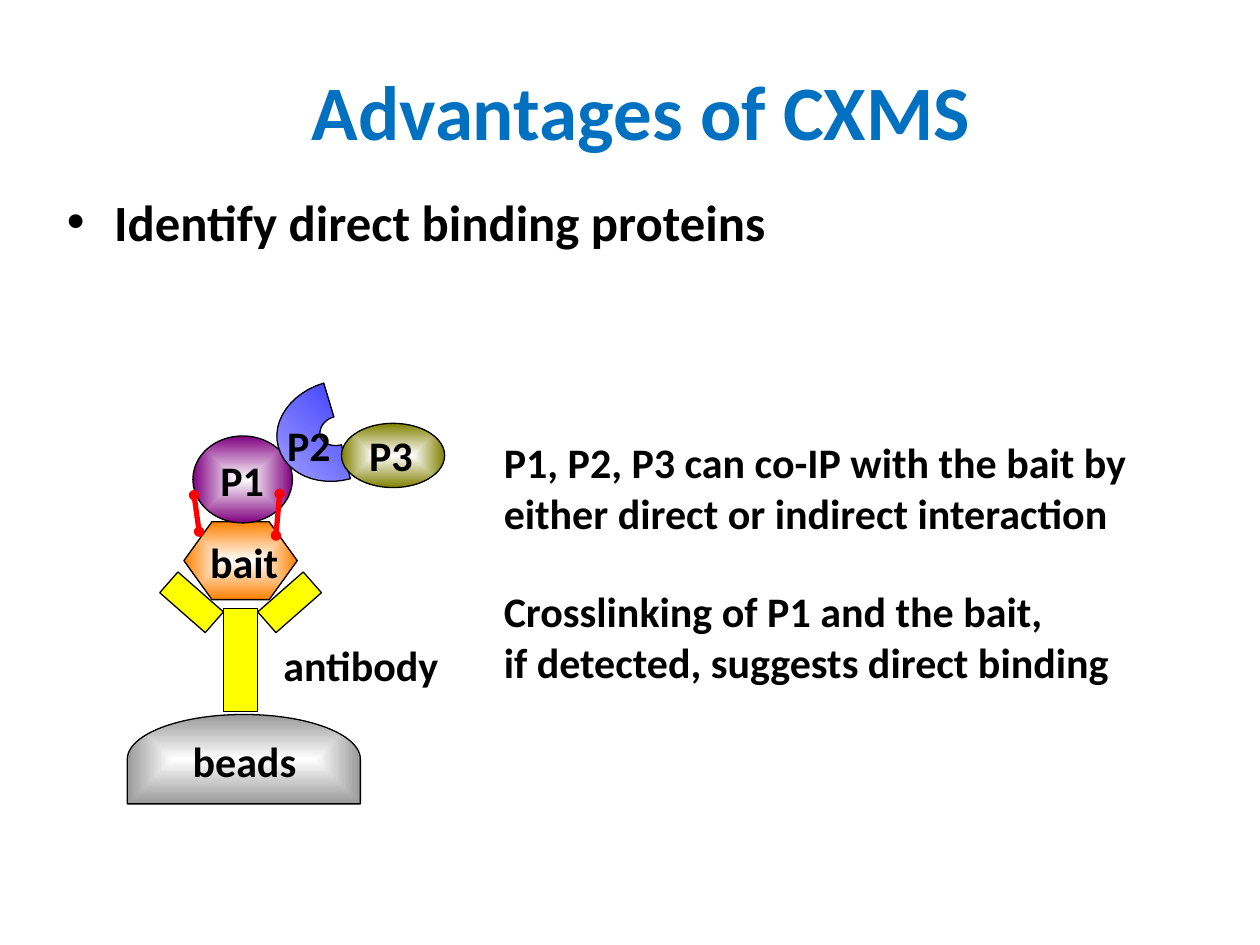
from lxml.etree import SubElement
from pptx import Presentation
from pptx.dml.color import RGBColor
from pptx.enum.shapes import MSO_CONNECTOR, MSO_SHAPE as Kind
from pptx.enum.text import MSO_ANCHOR, MSO_AUTO_SIZE, PP_ALIGN
from pptx.oxml import parse_xml
from pptx.oxml.ns import nsdecls, qn
from pptx.util import Pt

BLACK = RGBColor(0, 0, 0)
WHITE = RGBColor(255, 255, 255)
TITLE_BLUE = RGBColor(0x00, 0x70, 0xC0)
YELLOW = RGBColor(0xFF, 0xFF, 0x00)
RED = RGBColor(0xFF, 0x00, 0x00)
GRAY = RGBColor(0x99, 0x99, 0x99)
ORANGE = RGBColor(0xFF, 0x80, 0x00)
PURPLE = RGBColor(0x80, 0x00, 0x80)
OLIVE = RGBColor(0x80, 0x80, 0x00)
PALE_BLUE = RGBColor(0xA0, 0xA0, 0xFF)
BLUE = RGBColor(0x3C, 0x3C, 0xFF)

# Content: boxes are left, top, width, height in points
TITLE = ("Advantages of CXMS", (42.5, 30.2, 648, 65.5))
BULLET = ("Identify direct binding proteins", (31, 112.3, 648, 98.6))

# Kind, box, rotation, rim colour of the glow
BEADS = (Kind.FLOWCHART_DELAY, (113.8, 367.2, 51.1, 133.2), 270, GRAY)
BAIT = (Kind.HEXAGON, (105.1, 298.1, 64.8, 44.6), 0, ORANGE)
P1 = (Kind.OVAL, (110.2, 249.1, 56.9, 49.7), 0, PURPLE)
P3 = (Kind.OVAL, (195.1, 241.9, 59, 36.7), 0, OLIVE)

STEM = (127.8, 347.8, 19.4, 59)
ARM_SIZE, ARM_TOP, ARM_REACH, ARM_TILT = (15.8, 34.6), 326.9, 28, 48.7

P2_START = (195.1, 254.2)
P2_PATH = [  # one point is a line, three are a curve
    [(189.4, 255.6), (184.3, 253.4), (182.9, 249.1)],
    [(182.2, 244.8), (185, 239.8), (190.8, 238.3)],
    [(185, 218.9)],
    [(166.3, 224.6), (154.8, 240.5), (159.1, 255.6)],
    [(163.4, 270.7), (181.4, 278.6), (200.2, 273.6)],
]

LABELS = {
    "beads": (103, 416.9, 78, 36),
    "antibody": (154.8, 361.9, 106, 36),
    "bait": (113, 303.1, 56, 36),
    "P1": (118.8, 256.3, 42, 36),
    "P2": (157, 236.2, 42, 36),
    "P3": (203.8, 241.9, 42, 36),
}
NOTES = [
    ("P1, P2, P3 can co-IP with the bait by either direct or indirect interaction",
     (280.8, 246.2, 391.7, 64.8)),
    ("Crosslinking of P1 and the bait, \vif detected, suggests direct binding",
     (280.8, 331.2, 379.4, 65.5)),
]
CROSSLINKS = [(110.9, 283, 113.8, 303.8), (159.8, 282.2, 157.7, 306)]

deck = Presentation()
deck.slide_width, deck.slide_height = Pt(720), Pt(540)
page = deck.slides.add_slide(deck.slide_layouts[1])
shapes = page.shapes


def points(values):
    return [Pt(value) for value in values]


def write(box, text, size, color=BLACK, **paragraph_format):
    box.text_frame.text = text
    para = box.text_frame.paragraphs[0]
    for name, value in paragraph_format.items():
        setattr(para, name, value)
    for span in para.runs:
        span.font.color.rgb = color
        for name, value in {"name": "Calibri", "size": Pt(size), "bold": True}.items():
            setattr(span.font, name, value)
    return para


def fill_placeholder(box, content, size, color, **paragraph_format):
    text, place = content
    box.left, box.top, box.width, box.height = points(place)
    return write(box, text, size, color, **paragraph_format)


def add_text(text, place, wrap=False):
    box = shapes.add_textbox(*points(place))
    box.text_frame.word_wrap = wrap
    box.text_frame.auto_size = MSO_AUTO_SIZE.SHAPE_TO_FIT_TEXT
    write(box, text, 24)


def outline(shape):
    shape.shadow.inherit = False
    shape.line.color.rgb = BLACK
    shape.line.width = Pt(0.75)


def set_gradient(shape, first, last):
    shape.fill.gradient()
    stops = zip(shape.fill.gradient_stops, (first, last), (0, 1))
    for stop, color, position in stops:
        stop.color.rgb = color
        stop.position = position


def add_glow(kind, place, rotation, color):
    shape = shapes.add_shape(kind, *points(place))
    shape.rotation = rotation
    outline(shape)
    set_gradient(shape, WHITE, color)
    gradient = shape.element.spPr.find(qn("a:gradFill"))
    gradient.replace(gradient.find(qn("a:lin")), parse_xml(
        f'<a:path {nsdecls("a")} path="shape">'
        '<a:fillToRect l="50000" t="50000" r="50000" b="50000"/></a:path>'))
    return shape


def add_bar(place, rotation=0):
    bar = shapes.add_shape(Kind.RECTANGLE, *points(place))
    bar.rotation = rotation
    bar.fill.solid()
    bar.fill.fore_color.rgb = YELLOW
    outline(bar)


def curve(start, control_1, control_2, end, steps=12):
    for step in range(1, steps + 1):
        t = step / steps
        weights = ((1 - t) ** 3, 3 * t * (1 - t) ** 2, 3 * t * t * (1 - t), t ** 3)
        corners = (start, control_1, control_2, end)
        yield tuple(sum(w * c[axis] for w, c in zip(weights, corners)) for axis in (0, 1))


# Title and bullet
fill_placeholder(shapes.title, TITLE, 44, TITLE_BLUE, alignment=PP_ALIGN.CENTER)
shapes.title.text_frame.vertical_anchor = MSO_ANCHOR.MIDDLE
bullet = fill_placeholder(page.placeholders[1], BULLET, 29, BLACK,
                          line_spacing=0.8, space_before=Pt(5.8))
properties = bullet._p.get_or_add_pPr()
properties.set("marL", str(Pt(27)))
properties.set("indent", str(-Pt(27)))

# Beads, bait and antibody
add_glow(*BEADS)
add_text("beads", LABELS["beads"])
add_text("antibody", LABELS["antibody"])
add_glow(*BAIT).adjustments[0] = 0.361
add_bar(STEM)
axis_x = STEM[0] + STEM[2] / 2
for side in (-1, 1):
    left = axis_x + side * ARM_REACH - ARM_SIZE[0] / 2
    add_bar((left, ARM_TOP, *ARM_SIZE), side * ARM_TILT % 360)
add_text("bait", LABELS["bait"])

# Bound proteins
add_glow(*P1)
outline_points, here = [], P2_START
for segment in P2_PATH:
    outline_points += curve(here, *segment) if len(segment) == 3 else segment
    here = segment[-1]
builder = shapes.build_freeform(*points(P2_START), scale=1.0)
builder.add_line_segments([points(point) for point in outline_points], close=True)
crescent = builder.convert_to_shape()
outline(crescent)
set_gradient(crescent, PALE_BLUE, BLUE)
crescent.fill.gradient_angle = 45
add_text("P1", LABELS["P1"])
add_text("P2", LABELS["P2"])
add_glow(*P3)
add_text("P3", LABELS["P3"])

# Explanations
for text, place in NOTES:
    add_text(text, place, wrap=True)

# Crosslinks with small round ends
for ends in CROSSLINKS:
    link = shapes.add_connector(MSO_CONNECTOR.STRAIGHT, *points(ends))
    link.line.color.rgb = RED
    link.line.width = Pt(3)
    for tag in ("a:headEnd", "a:tailEnd"):
        SubElement(link.line._get_or_add_ln(), qn(tag), type="oval", w="sm", len="sm")
    SubElement(link.element.spPr, qn("a:effectLst"))

deck.save("out.pptx")
